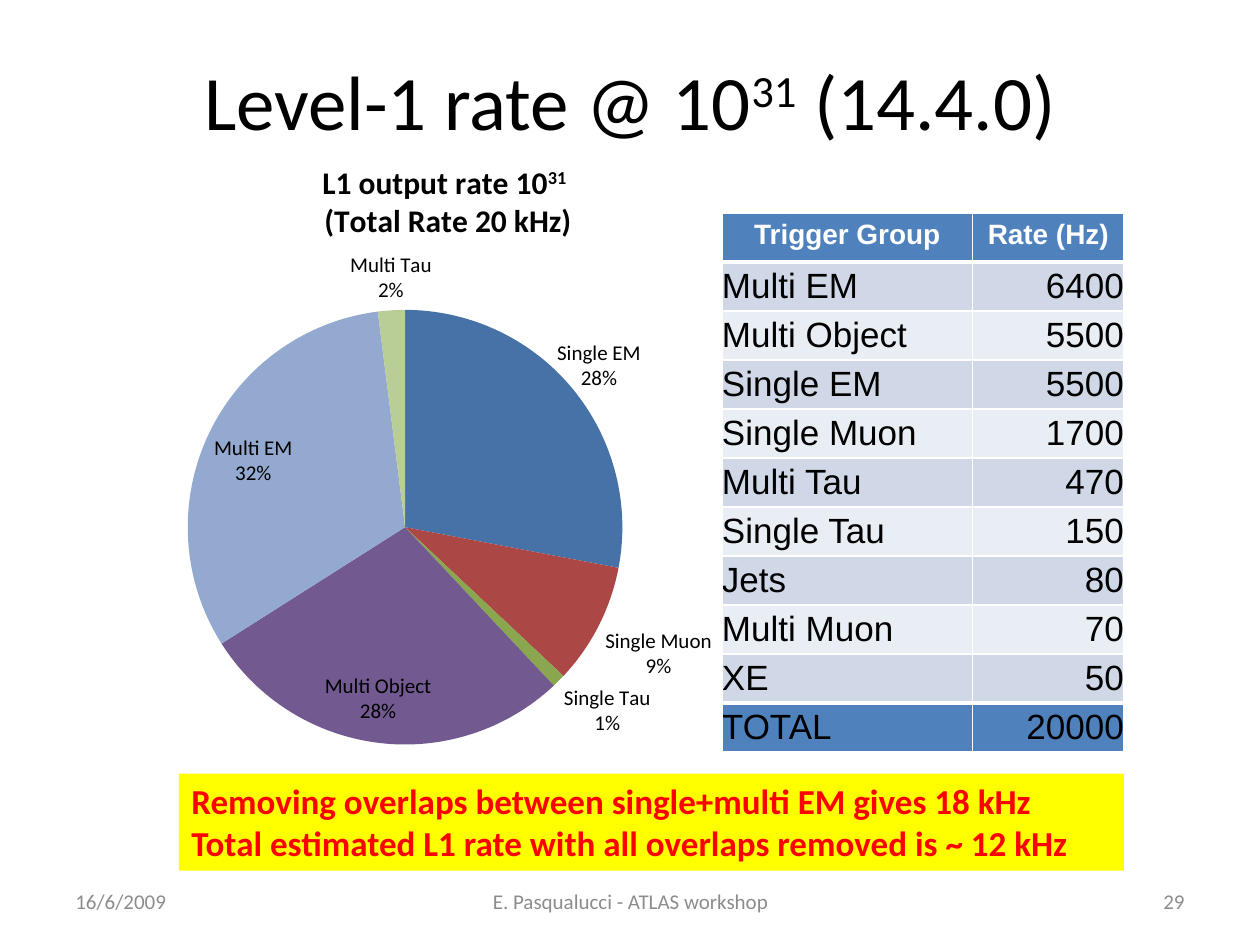
from lxml.etree import SubElement as Sub
from pptx import Presentation
from pptx.chart.data import CategoryChartData as ChartData
from pptx.dml.color import RGBColor as RGB
from pptx.enum.chart import XL_CHART_TYPE as Kind, XL_LABEL_POSITION as Spot
from pptx.enum.shapes import MSO_SHAPE as Shape
from pptx.enum.text import MSO_ANCHOR as Anchor, PP_ALIGN as Align
from pptx.oxml.ns import qn
from pptx.util import Inches, Pt

BLACK = RGB(0x00, 0x00, 0x00)
WHITE = RGB(0xFF, 0xFF, 0xFF)
GREY = RGB(0x8C, 0x8C, 0x8C)
RED = RGB(0xFF, 0x00, 0x00)
YELLOW = RGB(0xFF, 0xFF, 0x00)
BLUE = RGB(0x4F, 0x81, 0xBD)
BANDS = [RGB(0xD0, 0xD8, 0xE8), RGB(0xE9, 0xED, 0xF4)]

RATES = {
    "Multi EM": 6400,
    "Multi Object": 5500,
    "Single EM": 5500,
    "Single Muon": 1700,
    "Multi Tau": 470,
    "Single Tau": 150,
    "Jets": 80,
    "Multi Muon": 70,
    "XE": 50,
}
TOTAL = 20000
SLICES = [
    ("Single EM", RGB(0x46, 0x72, 0xA8)),
    ("Single Muon", RGB(0xAB, 0x47, 0x44)),
    ("Single Tau", RGB(0x8A, 0xA6, 0x4F)),
    ("Multi Object", RGB(0x72, 0x59, 0x90)),
    ("Jets", RGB(0x42, 0x99, 0xB0)),
    ("XE", RGB(0xDC, 0x85, 0x3E)),
    ("Multi EM", RGB(0x93, 0xA9, 0xCF)),
    ("Multi Muon", RGB(0xD1, 0x93, 0x92)),
    ("Multi Tau", RGB(0xB9, 0xCD, 0x96)),
]
SHIFTS = {"Single EM": (-0.03, 0.01), "Jets": (0.03, 0.04)}


def style(font, size, color, bold=False, name="Calibri"):
    font.name = name
    font.size = Pt(size)
    font.bold = bold
    font.color.rgb = color


def add_run(para, text, size, color, bold=False, name="Calibri", raised=False):
    run = para.add_run()
    run.text = text
    style(run.font, size, color, bold, name)
    if raised:
        run.font._element.set("baseline", "30000")


def add_title(slide, box):
    title = slide.shapes.title
    title.left, title.top, title.width, title.height = map(Inches, box)
    frame = title.text_frame
    frame.vertical_anchor = Anchor.MIDDLE
    para = frame.paragraphs[0]
    para.alignment = Align.CENTER
    add_run(para, "Level-1 rate @ 10", 44, BLACK)
    add_run(para, "31", 44, BLACK, raised=True)
    add_run(para, " (14.4.0)", 44, BLACK)


def add_foot(slide, box, text, align):
    frame = slide.shapes.add_textbox(*map(Inches, box)).text_frame
    frame.word_wrap = True
    frame.vertical_anchor = Anchor.MIDDLE
    para = frame.paragraphs[0]
    para.alignment = align
    add_run(para, text, 12, GREY)


def add_note(slide, box, lines):
    note = slide.shapes.add_shape(Shape.RECTANGLE, *map(Inches, box))
    note.shadow.inherit = False
    note.fill.solid()
    note.fill.fore_color.rgb = YELLOW
    note.line.fill.background()
    frame = note.text_frame
    frame.word_wrap = True
    frame.vertical_anchor = Anchor.TOP
    for spot, line in enumerate(lines):
        para = frame.add_paragraph() if spot else frame.paragraphs[0]
        para.alignment = Align.LEFT
        add_run(para, line, 20, RED, True)


def add_edges(cell, top, base):
    props = cell._tc.get_or_add_tcPr()
    for side, width in (("L", 1), ("R", 1), ("T", top), ("B", base)):
        line = Sub(props, qn(f"a:ln{side}"), w=str(Pt(width)))
        Sub(Sub(line, qn("a:solidFill")), qn("a:srgbClr"), val=str(WHITE))


def add_rates(slide, box):
    rows = [("Trigger Group", "Rate (Hz)"), *RATES.items(), ("TOTAL", TOTAL)]
    last = len(rows) - 1
    table = slide.shapes.add_table(len(rows), 2, *map(Inches, box)).table
    for col, width in zip(table.columns, (1.99, 1.2)):
        col.width = Inches(width)
    for y, row in enumerate(rows):
        for x, value in enumerate(row):
            cell = table.cell(y, x)
            add_edges(cell, 3 if y in (1, last) else 1, 3 if y in (0, last - 1) else 1)
            cell.fill.solid()
            cell.fill.fore_color.rgb = BLUE if y in (0, last) else BANDS[(y - 1) % 2]
            para = cell.text_frame.paragraphs[0]
            if y == 0:
                para.alignment = Align.CENTER
                add_run(para, value, 16, WHITE, True, "Arial")
                continue
            cell.vertical_anchor = Anchor.MIDDLE
            cell.margin_left = cell.margin_right = 0
            cell.margin_top = cell.margin_bottom = 0
            para.alignment = Align.RIGHT if x else Align.LEFT
            add_run(para, str(value), 20, BLACK, name="Arial")


def set_layout(node, **parts):
    for old in node.findall(qn("c:layout")):
        node.remove(old)
    layout = node.makeelement(qn("c:layout"))
    first = [kid for kid in node if kid.tag in (qn("c:tx"), qn("c:idx"))]
    node.insert(len(first), layout)
    manual = Sub(layout, qn("c:manualLayout"))
    for key, value in parts.items():
        Sub(manual, qn(f"c:{key}"), val=str(value))


def split_lines(node):
    gap = node.makeelement(qn("c:separator"))
    gap.text = "\n"
    node.find(qn("c:showBubbleSize")).addnext(gap)


def add_labels(series):
    labels = series.data_labels
    style(labels.font, 12, BLACK)
    labels.show_category_name = True
    labels.show_percentage = True
    labels.show_value = False
    labels.number_format = "0%"
    labels.number_format_is_linked = False
    labels.position = Spot.BEST_FIT
    split_lines(labels._element)
    for spot, (name, _) in enumerate(SLICES):
        if name not in SHIFTS:
            continue
        label = series.points[spot].data_label
        style(label.font, 12, BLACK)
        label.position = Spot.BEST_FIT
        node = label._get_or_add_dLbl()
        for key, value in (("Val", 0), ("CatName", 1), ("Percent", 1)):
            node.find(qn(f"c:show{key}")).set("val", str(value))
        split_lines(node)
        x, y = SHIFTS[name]
        set_layout(node, x=x, y=y)


def add_pie(slide, box):
    whole = sum(RATES.values())
    data = ChartData()
    data.categories = [name for name, _ in SLICES]
    data.add_series("Series 1", [round(100 * RATES[name] / whole) for name, _ in SLICES])
    chart = slide.shapes.add_chart(Kind.PIE, *map(Inches, box), data).chart
    style(chart.font, 10, BLACK)
    chart.has_legend = False

    frame = chart.chart_title.text_frame
    para = frame.paragraphs[0]
    add_run(para, "L1 output rate 10", 18, BLACK, True)
    add_run(para, "31", 18, BLACK, True, raised=True)
    add_run(frame.add_paragraph(), " (Total Rate 20 kHz)", 18, BLACK, True)
    set_layout(chart.chart_title._element, xMode="edge", yMode="edge", x=0.37, y=0.03)

    plot = chart.plots[0]
    plot.vary_by_categories = True
    set_layout(chart._chartSpace.chart.plotArea, layoutTarget="inner",
               xMode="edge", yMode="edge", x=0.18, y=0.24, w=0.64, h=0.6)
    series = plot.series[0]
    for spot, (_, color) in enumerate(SLICES):
        fill = series.points[spot].format.fill
        fill.solid()
        fill.fore_color.rgb = color
    add_labels(series)


def main():
    deck = Presentation()
    deck.slide_width, deck.slide_height = Inches(10), Inches(7.5)
    slide = deck.slides.add_slide(deck.slide_layouts[5])
    add_title(slide, (0.5, 0.17, 9, 1.25))
    add_foot(slide, (0.5, 6.95, 2.33, 0.4), "16/6/2009", Align.LEFT)
    add_foot(slide, (3.42, 6.95, 3.17, 0.4), "E. Pasqualucci - ATLAS workshop", Align.CENTER)
    add_foot(slide, (7.17, 6.95, 2.33, 0.4), "29", Align.RIGHT)
    add_note(slide, (1.42, 6.14, 7.5, 0.77), [
        "Removing overlaps between single+multi EM gives 18 kHz",
        "Total estimated L1 rate with all overlaps removed is ~ 12 kHz",
    ])
    add_rates(slide, (5.73, 1.69, 3.19, 4.28))
    add_pie(slide, (0.42, 1.08, 5.59, 5.75))
    deck.save("out.pptx")


if __name__ == "__main__":
    main()
